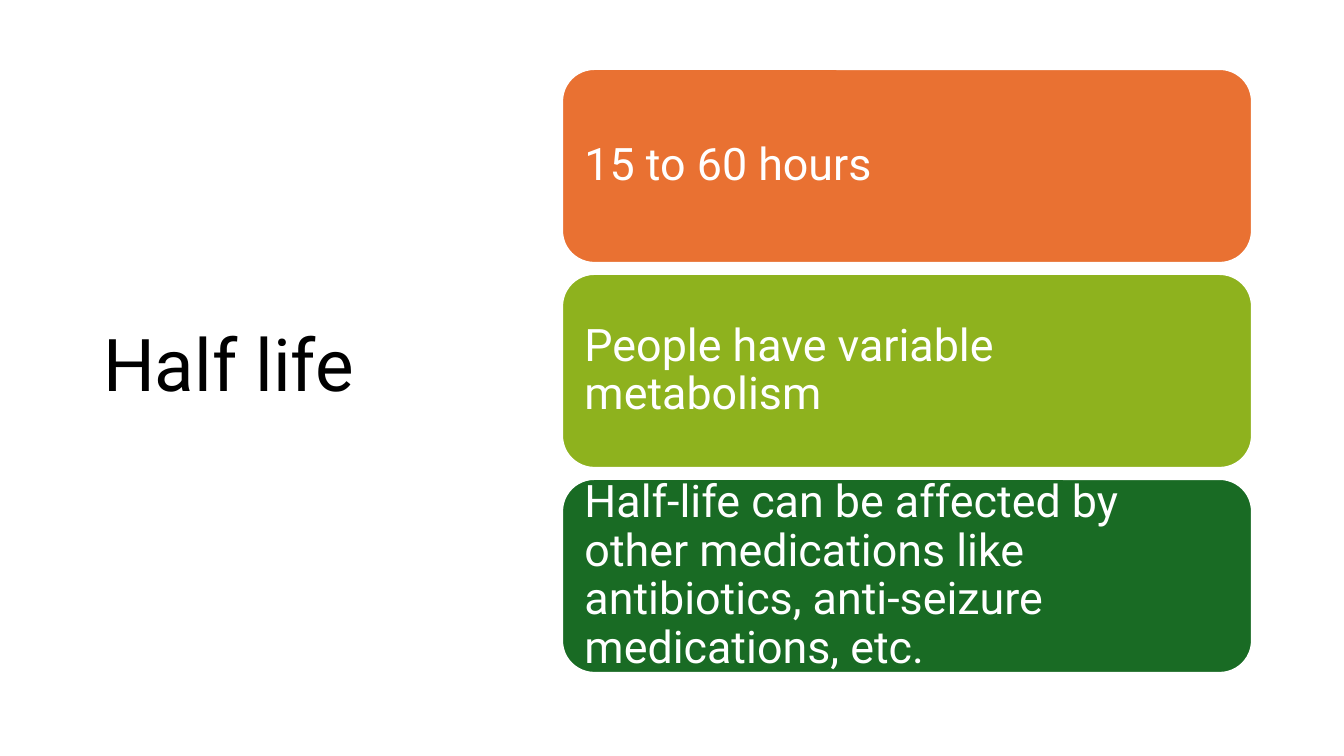
from pptx import Presentation
from pptx.dml.color import RGBColor
from pptx.enum.shapes import MSO_SHAPE
from pptx.enum.text import MSO_ANCHOR, MSO_AUTO_SIZE, PP_ALIGN
from pptx.util import Pt

ROUNDED = MSO_SHAPE.ROUNDED_RECTANGLE
MIDDLE = MSO_ANCHOR.MIDDLE
LEFT = PP_ALIGN.LEFT
NO_FIT = MSO_AUTO_SIZE.NONE

# Content
TITLE = "Half life"
FACTS = [
    ("15 to 60 hours", "orange"),
    ("People have variable metabolism", "lime"),
    ("Half-life can be affected by other medications like antibiotics, "
     "anti-seizure medications, etc.", "green"),
]

# Theme
THEME = {
    "font": "Roboto",
    "title_size": 52,
    "fact_size": 32,
    "black": "000000",
    "white": "FFFFFF",
    "orange": "E97132",
    "lime": "8EB21E",
    "green": "196B24",
}

# Layout in px
SLIDE_W, SLIDE_H = 1344, 756
TITLE_BOX = (93, 61, 372, 614)
CARD_X, CARD_Y, CARD_W, CARD_H = 562, 69, 690, 194
CARD_GAP = 11
CARD_INSET = 13


def px(n):
    return round(n * 914400 / 100.8)


def color(name):
    return RGBColor.from_string(THEME[name])


def set_all(obj, values):
    for name, value in values.items():
        setattr(obj, name, value)


def write(sp, text, size, color_name, inset=None):
    tf = sp.text_frame
    set_all(tf, {"word_wrap": True, "auto_size": NO_FIT,
                 "vertical_anchor": MIDDLE})
    if inset is not None:
        for side in ("left", "top", "right", "bottom"):
            setattr(tf, f"margin_{side}", px(inset))
    p = tf.paragraphs[0]
    set_all(p, {"alignment": LEFT, "line_spacing": 0.9})
    r = p.add_run()
    r.text = text
    set_all(r.font, {"name": THEME["font"], "size": Pt(THEME[size])})
    r.font.color.rgb = color(color_name)


def add_card(s, index, text, fill):
    top = CARD_Y + index * (CARD_H + CARD_GAP)
    sp = s.shapes.add_shape(ROUNDED, px(CARD_X), px(top),
                            px(CARD_W), px(CARD_H))
    sp.shadow.inherit = False
    sp.fill.solid()
    sp.fill.fore_color.rgb = color(fill)
    sp.line.color.rgb = color("white")
    sp.line.width = Pt(1.5)
    write(sp, text, "fact_size", "white", CARD_INSET)


def main():
    prs = Presentation()
    set_all(prs, {"slide_width": px(SLIDE_W), "slide_height": px(SLIDE_H)})
    s = prs.slides.add_slide(prs.slide_layouts.get_by_name("Title Only"))

    # Title on the left
    title = s.shapes.title
    set_all(title, dict(zip(("left", "top", "width", "height"),
                            map(px, TITLE_BOX))))
    write(title, TITLE, "title_size", "black")

    # Stack of fact cards on the right
    for index, (text, fill) in enumerate(FACTS):
        add_card(s, index, text, fill)

    prs.save("out.pptx")


if __name__ == "__main__":
    main()
